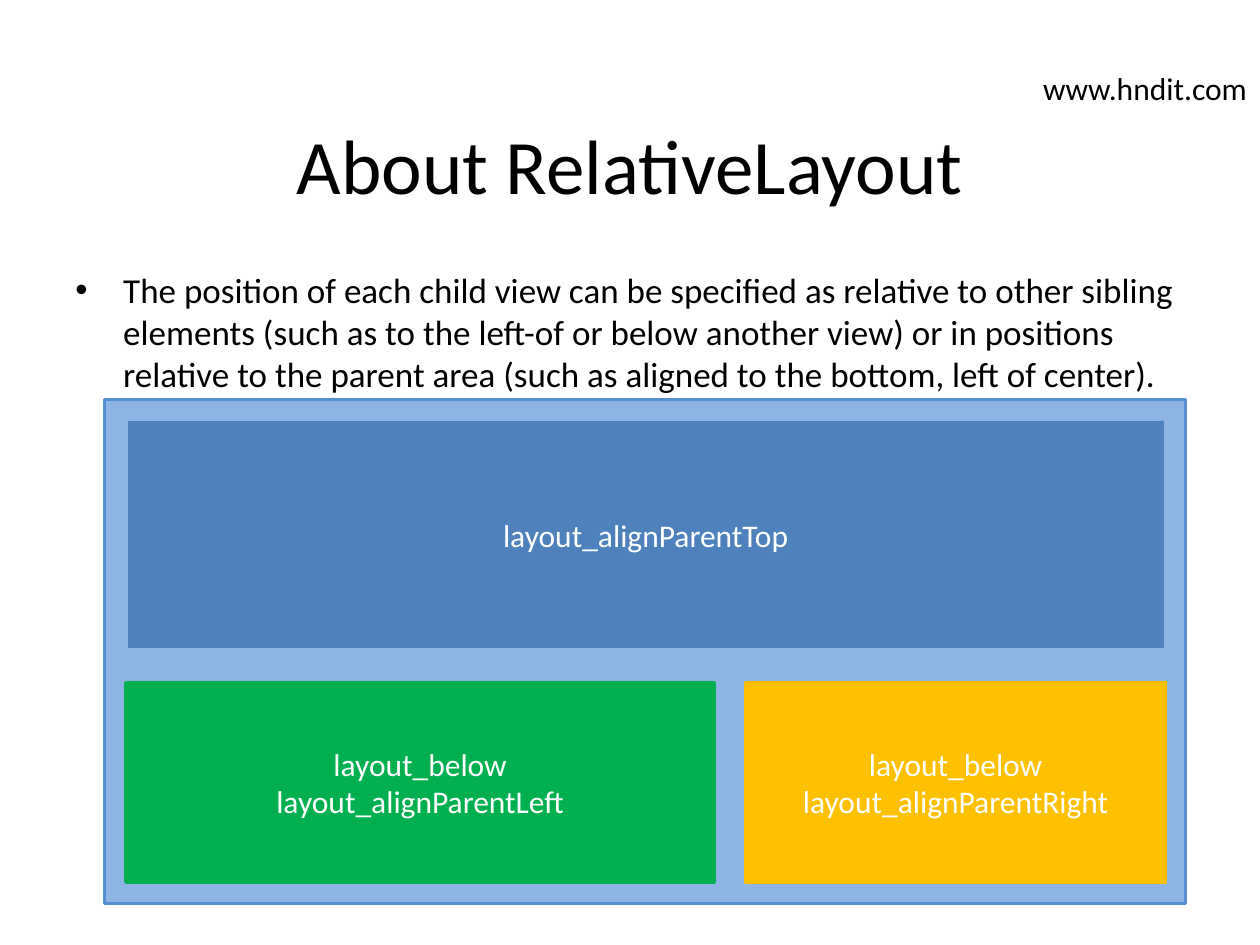
from lxml.etree import SubElement
from pptx import Presentation
from pptx.dml.color import RGBColor
from pptx.enum.shapes import MSO_SHAPE
from pptx.enum.text import MSO_ANCHOR, PP_ALIGN
from pptx.oxml.ns import qn
from pptx.util import Inches, Pt

THEME = {
    "font": "Calibri", "title": 44, "body": 20, "label": 18, "line": 2,
    "text": "000000", "on_fill": "FFFFFF",
    "panel": "8EB4E3", "panel_edge": "558ED5",
    "top": "4F81BD", "left": "00B050", "right": "FFC000",
}

TITLE = "About RelativeLayout"
BODY = ("The position of each child view can be specified as relative to other "
        "sibling elements (such as to the left-of or below another view) or in "
        "positions relative to the parent\u00a0area (such as aligned to the bottom, "
        "left of center).")
SITE = "www.hndit.com"

# lines of text, box (left, top, width, height), fill, edge
VIEWS = [
    ([], (0.83, 3.17, 8.58, 4), "panel", "panel_edge"),
    (["layout_alignParentTop"], (1, 3.33, 8.25, 1.83), "top", "panel"),
    (["layout_below", "layout_alignParentLeft"], (1, 5.42, 4.67, 1.58), "left", "left"),
    (["layout_below", "layout_alignParentRight"], (5.92, 5.42, 3.33, 1.58), "right", "right"),
]


def color(name):
    return RGBColor.from_string(THEME[name])


def write(sp, lines, size="label", ink="text", align=PP_ALIGN.LEFT,
          anchor=MSO_ANCHOR.TOP, wrap=True, bullet=False):
    tf = sp.text_frame
    tf.word_wrap = wrap
    tf.vertical_anchor = anchor
    for i, line in enumerate(lines):
        p = tf.add_paragraph() if i else tf.paragraphs[0]
        p.alignment = align
        if bullet:
            add_bullet(p)
        r = p.add_run()
        r.text = line
        r.font.name = THEME["font"]
        r.font.size = Pt(THEME[size])
        r.font.color.rgb = color(ink)


def add_bullet(p, indent=0.38):
    pPr = p._p.get_or_add_pPr()
    pPr.set("marL", str(Inches(indent)))
    pPr.set("indent", str(-Inches(indent)))
    SubElement(pPr, qn("a:buFont"), typeface="Arial")
    SubElement(pPr, qn("a:buChar"), char="•")


def add_text(s, box, text, **fmt):
    write(s.shapes.add_textbox(*map(Inches, box)), [text], **fmt)


def add_view(s, lines, box, fill, edge):
    sp = s.shapes.add_shape(MSO_SHAPE.RECTANGLE, *map(Inches, box))
    sp.shadow.inherit = False
    sp.fill.solid()
    sp.fill.fore_color.rgb = color(fill)
    sp.line.color.rgb = color(edge)
    sp.line.width = Pt(THEME["line"])
    write(sp, lines, ink="on_fill", align=PP_ALIGN.CENTER, anchor=MSO_ANCHOR.MIDDLE)


def main():
    prs = Presentation()
    prs.slide_width, prs.slide_height = Inches(10), Inches(7.5)
    s = prs.slides.add_slide(prs.slide_layouts[6])
    add_text(s, (0.5, 0.67, 9, 1.25), TITLE, size="title",
             align=PP_ALIGN.CENTER, anchor=MSO_ANCHOR.MIDDLE)
    add_text(s, (0.5, 2.08, 9, 4.62), BODY, size="body", bullet=True)
    for view in VIEWS:
        add_view(s, *view)
    add_text(s, (8.18, 0.5, 1.82, 0.4), SITE, wrap=False)
    prs.save("out.pptx")


if __name__ == "__main__":
    main()
